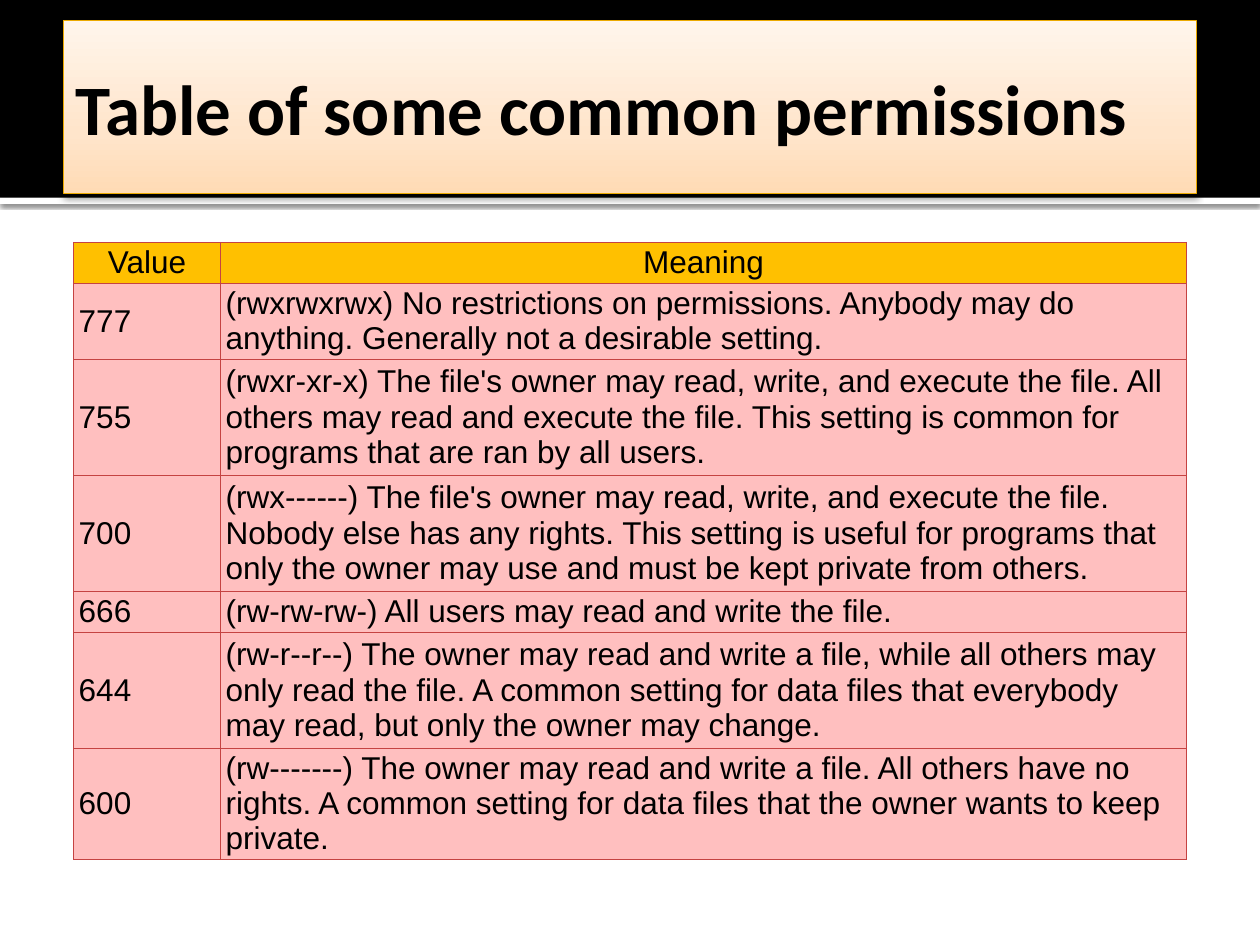
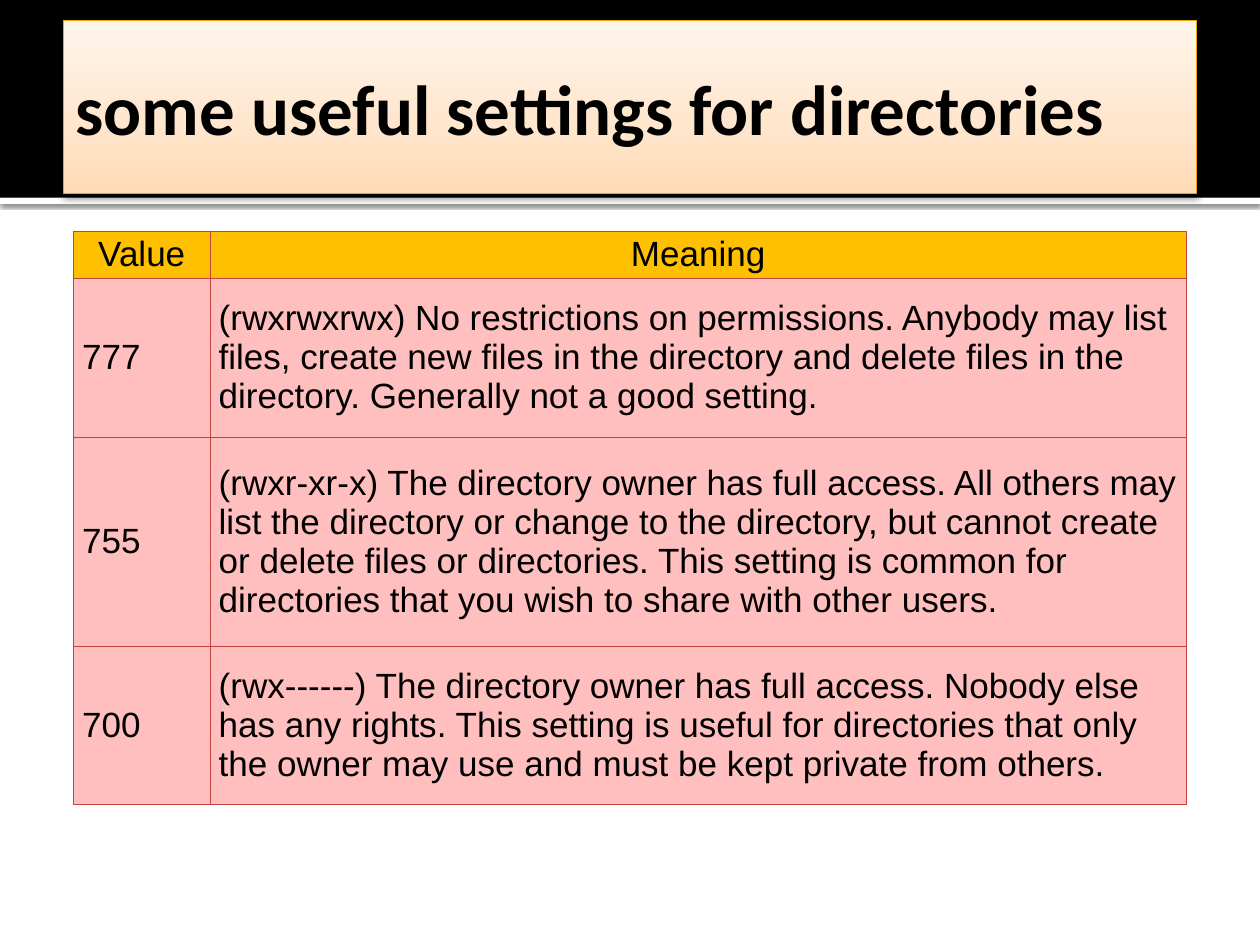
"""Build two slides with tables of common file and directory permissions."""
from lxml import etree
from pptx import Presentation
from pptx.dml.color import RGBColor
from pptx.enum import shapes, text
from pptx.oxml import ns
from pptx.util import Pt

COLORS = {"band": "000000", "rule": "FFFFFF", "text": "000000", "title_line": "EBA900",
          "head": "FFC000", "body": "FFBFBF", "border": "C54342"}
TITLE_STOPS = [(0, "FFDBB5"), (35, "FFE5CB"), (100, "FFF5EB")]

SLIDES = [
    {"title": "Table of some common permissions", "top": 138.5, "size": 18,
     "value_width": 84, "margins": (3, 1.5),
     "heights": [23.4, 43.4, 66.3, 66.3, 23.4, 66.3, 63.4],
     "rows": [
         ("Value", "Meaning"),
         ("777", "(rwxrwxrwx) No restrictions on permissions. Anybody may do anything. "
                 "Generally not a desirable setting."),
         ("755", "(rwxr-xr-x) The file's owner may read, write, and execute the file. "
                 "All others may read and execute the file. This setting is common for "
                 "programs that are ran by all users."),
         ("700", "(rwx------) The file's owner may read, write, and execute the file. "
                 "Nobody else has any rights. This setting is useful for programs that only "
                 "the owner may use and must be kept private from others."),
         ("666", "(rw-rw-rw-) All users may read and write the file."),
         ("644", "(rw-r--r--) The owner may read and write a file, while all others may only "
                 "read the file. A common setting for data files that everybody may read, "
                 "but only the owner may change."),
         ("600", "(rw-------) The owner may read and write a file. All others have no rights. "
                 "A common setting for data files that the owner wants to keep private."),
     ]},
    {"title": "some useful settings for directories", "top": 132, "size": 20,
     "value_width": 78, "margins": (5, 2.3),
     "heights": [26.9, 90.8, 119.4, 90.8],
     "rows": [
         ("Value", "Meaning"),
         ("777", "(rwxrwxrwx) No restrictions on permissions. Anybody may list files, create "
                 "new files in the directory and delete files in the directory. Generally "
                 "not a good setting."),
         ("755", "(rwxr-xr-x) The directory owner has full access. All others may list the "
                 "directory or change to the directory, but cannot create or delete files or "
                 "directories. This setting is common for directories that you wish to share "
                 "with other users."),
         ("700", "(rwx------) The directory owner has full access. Nobody else has any rights. "
                 "This setting is useful for directories that only the owner may use and must "
                 "be kept private from others."),
     ]},
]


def add(parent, tag, **attrs):
    el = etree.SubElement(parent, ns.qn(tag))
    for name, value in attrs.items():
        el.set(name, str(value))
    return el


def add_box(s, left, top, width, height, fill=None, shadow=None):
    sp = s.shapes.add_shape(shapes.MSO_SHAPE.RECTANGLE, Pt(left), Pt(top), Pt(width), Pt(height))
    sp.shadow.inherit = False
    sp.line.fill.background()
    if fill:
        sp.fill.solid()
        sp.fill.fore_color.rgb = RGBColor.from_string(fill)
    if shadow:
        alpha, blur, dist = shadow
        effects = sp._element.spPr.find(ns.qn("a:effectLst"))
        outer = add(effects, "a:outerShdw", blurRad=Pt(blur), dist=Pt(dist),
                    dir=5400000, rotWithShape=0)
        add(add(outer, "a:srgbClr", val="000000"), "a:alpha", val=alpha * 1000)
    return sp


prs = Presentation()
prs.slide_width, prs.slide_height = Pt(720), Pt(540)

for spec_ in SLIDES:
    s = prs.slides.add_slide(prs.slide_layouts[6])
    add_box(s, 0, 113, 720, 3.6, COLORS["rule"], (60, 2.5, 0.8))
    add_box(s, 0, 0, 720, 113, COLORS["band"])

    title = add_box(s, 36, 12, 648, 98.6, shadow=(38, 3.5, 2))
    title.fill.gradient()
    title.fill.gradient_angle = 90
    stops = title._element.spPr.find(".//" + ns.qn("a:gsLst"))
    stops.clear()
    for pos, color in TITLE_STOPS:
        add(add(stops, "a:gs", pos=pos * 1000), "a:srgbClr", val=color)
    title.line.color.rgb = RGBColor.from_string(COLORS["title_line"])
    title.line.width = Pt(0.5)
    tf = title.text_frame
    tf.word_wrap = True
    tf.vertical_anchor = text.MSO_ANCHOR.MIDDLE
    tf.margin_left = Pt(7.2)
    tf.margin_right = tf.margin_top = tf.margin_bottom = Pt(3.6)
    p = tf.paragraphs[0]
    p.text = spec_["title"]
    p.alignment = text.PP_ALIGN.LEFT
    p.font.name, p.font.size, p.font.bold = "Calibri", Pt(40.5), True
    p.font.color.rgb = RGBColor.from_string(COLORS["text"])

    heights = spec_["heights"]
    table = s.shapes.add_table(len(heights), 2, Pt(42), Pt(spec_["top"]),
                               Pt(636), Pt(sum(heights))).table
    table.columns[0].width = Pt(spec_["value_width"])
    table.columns[1].width = Pt(636 - spec_["value_width"])
    side, edge = spec_["margins"]
    for i, (height, row) in enumerate(zip(heights, spec_["rows"])):
        table.rows[i].height = Pt(height)
        for j, words in enumerate(row):
            cell = table.cell(i, j)
            cell.margin_left = cell.margin_right = Pt(side)
            cell.margin_top = cell.margin_bottom = Pt(edge)
            cell.vertical_anchor = text.MSO_ANCHOR.MIDDLE
            tcPr = cell._tc.get_or_add_tcPr()
            for tag in ("a:lnL", "a:lnR", "a:lnT", "a:lnB"):
                ln = add(tcPr, tag, w=Pt(0.5))
                add(add(ln, "a:solidFill"), "a:srgbClr", val=COLORS["border"])
            cell.fill.solid()
            cell.fill.fore_color.rgb = RGBColor.from_string(COLORS["body" if i else "head"])
            p = cell.text_frame.paragraphs[0]
            p.text = words
            p.alignment = text.PP_ALIGN.LEFT if i else text.PP_ALIGN.CENTER
            p.font.name, p.font.size, p.font.bold = "Arial", Pt(spec_["size"]), False
            p.font.color.rgb = RGBColor.from_string(COLORS["text"])

prs.save("out.pptx")
